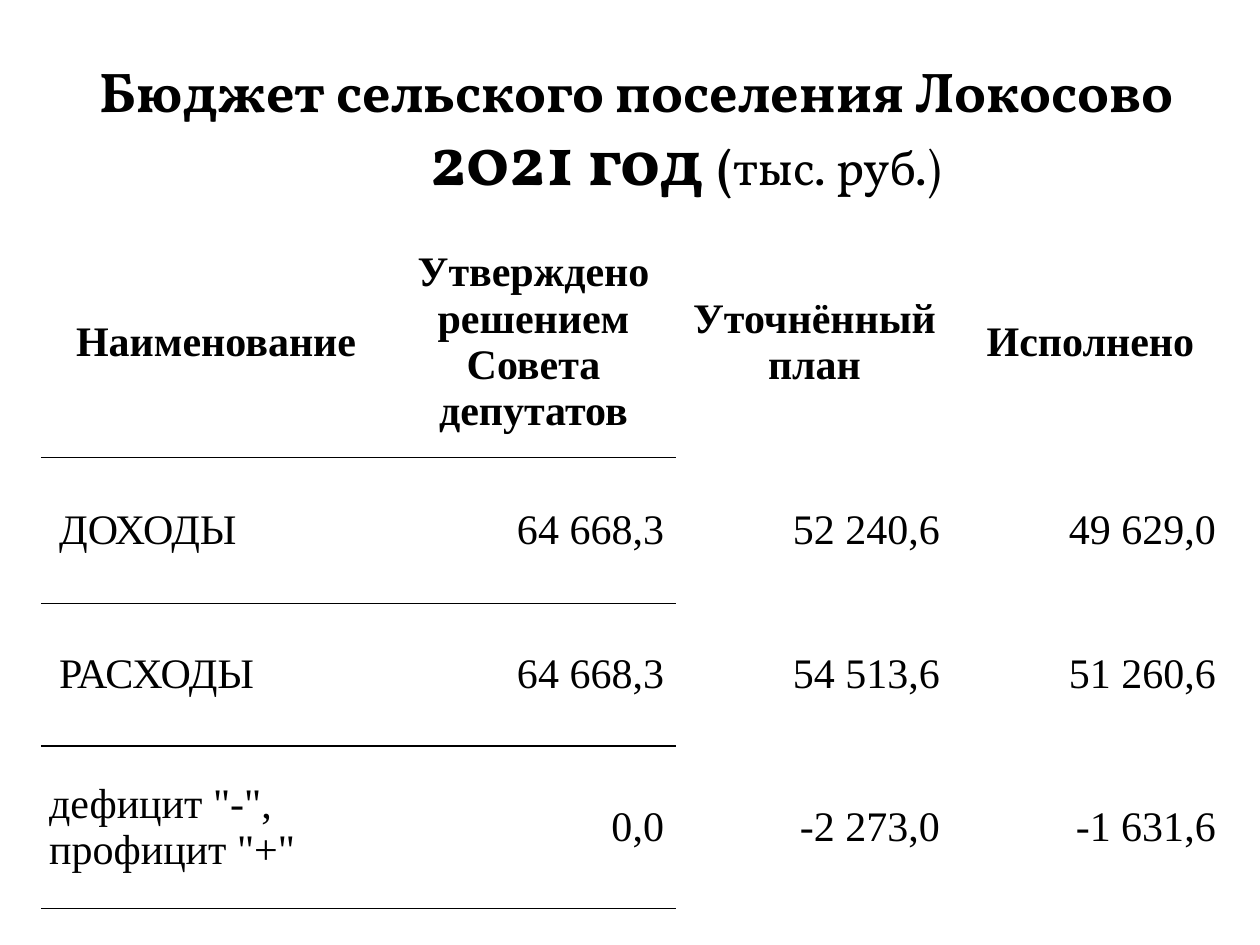
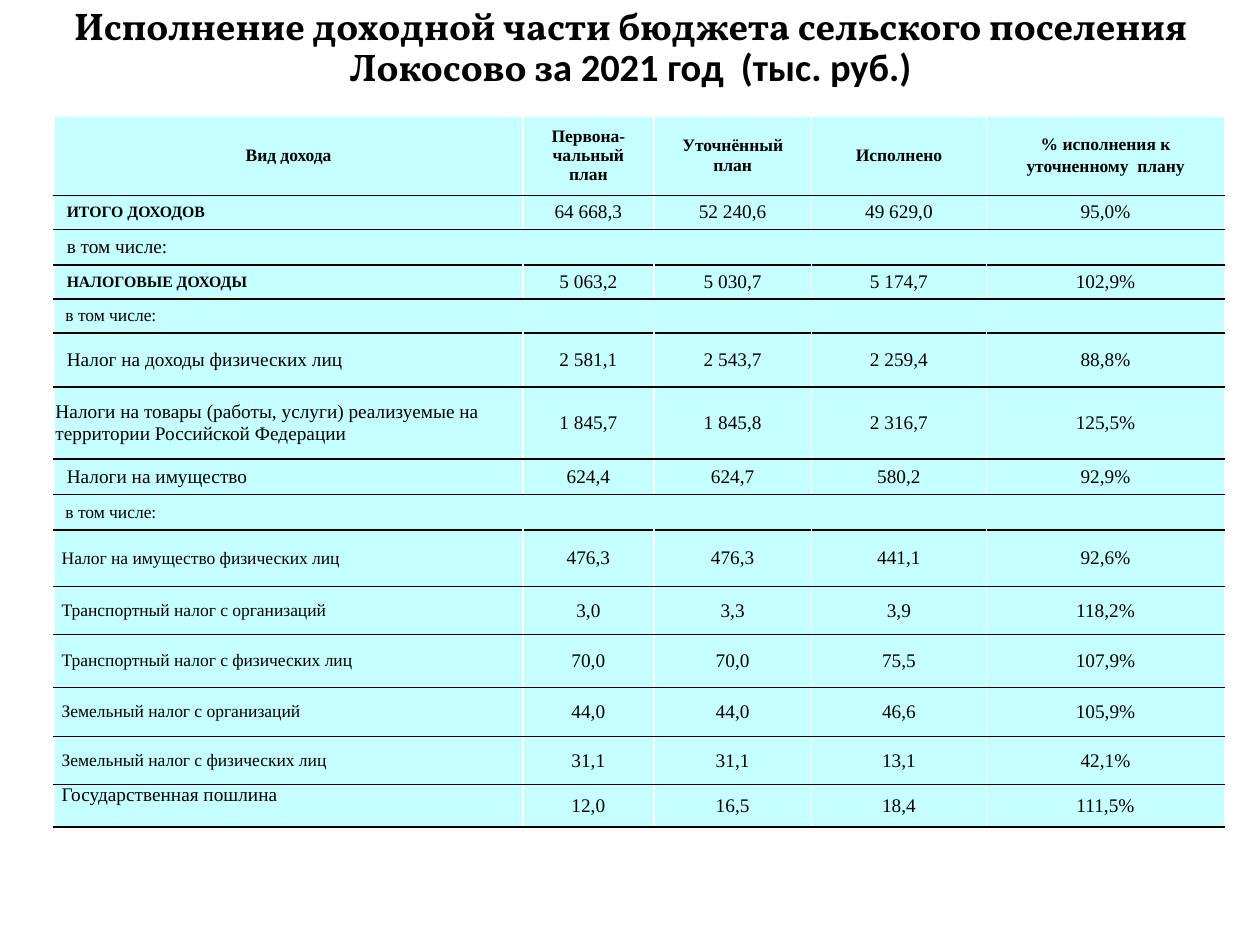
from dataclasses import dataclass
from typing import Optional

import lxml.etree
import pptx
import pptx.dml.color
import pptx.enum.text
import pptx.oxml.ns
import pptx.util

# Shared look; all lengths are columns and rows of a 1000 x 750 grid
SLIDE_W, SLIDE_H = pptx.util.Inches(10), pptx.util.Inches(7.5)
GRID_COLS, GRID_ROWS = 1000, 750
BLACK, WHITE, AQUA = "000000", "FFFFFF", "C5FFFF"
TITLE_FONT, TABLE_FONT = "Vollkorn", "Times New Roman"
ALIGN = pptx.enum.text.PP_ALIGN
ANCHOR = pptx.enum.text.MSO_ANCHOR


@dataclass(frozen=True)
class Box:
    left: float
    top: float
    width: float
    height: float


@dataclass(frozen=True)
class Inset:
    side: float
    edge: float


WIDE, NARROW, FLUSH = Inset(10, 5), Inset(6, 0), Inset(1, 0)
INDENTED, SUBHEAD = Inset(14, 0), Inset(9, 0)


@dataclass(frozen=True)
class TitleRun:
    text: str
    size: float
    bold: bool = True
    font: str = TITLE_FONT


@dataclass(frozen=True)
class TitleLine:
    runs: tuple[TitleRun, ...]
    indent: float = 0


@dataclass(frozen=True)
class CellStyle:
    size: float
    bold: bool = False
    align: ALIGN = ALIGN.CENTER
    inset: Inset = NARROW
    anchor: ANCHOR = ANCHOR.MIDDLE
    fill: str = WHITE
    top: str = BLACK
    bottom: str = BLACK


@dataclass(frozen=True)
class IncomeRow:
    height: float
    label: str
    values: Optional[tuple[str, ...]] = None
    size: float = 10
    bold: bool = False
    inset: Inset = NARROW
    anchor: ANCHOR = ANCHOR.MIDDLE


def gx(cols: float) -> int:
    return round(SLIDE_W * cols / GRID_COLS)


def gy(rows: float) -> int:
    return round(SLIDE_H * rows / GRID_ROWS)


def rgb(value: str) -> pptx.dml.color.RGBColor:
    return pptx.dml.color.RGBColor.from_string(value)


def set_font(font, name: str, size: float, bold: bool) -> None:
    font.name, font.size, font.bold = name, pptx.util.Pt(size), bold
    font.color.rgb = rgb(BLACK)


def add_title(slide, box: Box, lines: list[TitleLine]) -> None:
    sp = slide.shapes.add_textbox(gx(box.left), gy(box.top), gx(box.width), gy(box.height))
    tf = sp.text_frame
    tf.word_wrap = True
    tf.vertical_anchor = ANCHOR.MIDDLE
    tf.margin_top = tf.margin_bottom = 0
    for i, line in enumerate(lines):
        p = tf.add_paragraph() if i else tf.paragraphs[0]
        p.alignment, p.line_spacing = ALIGN.CENTER, 0.9
        first = line.runs[0]
        set_font(p.font, first.font, first.size, first.bold)
        if line.indent:
            p._p.get_or_add_pPr().set("marL", str(gx(line.indent)))
        for item in line.runs:
            r = p.add_run()
            r.text = item.text
            if item is not first:
                set_font(r.font, item.font, item.size, item.bold)


def set_borders(cell, top: str, bottom: str) -> None:
    tcPr = cell._tc.get_or_add_tcPr()
    sides = {"lnL": WHITE, "lnR": WHITE, "lnT": top, "lnB": bottom}
    for i, (tag, color) in enumerate(sides.items()):
        ln = lxml.etree.Element(pptx.oxml.ns.qn(f"a:{tag}"), w=str(pptx.util.Pt(1)))
        fill = lxml.etree.SubElement(ln, pptx.oxml.ns.qn("a:solidFill"))
        lxml.etree.SubElement(fill, pptx.oxml.ns.qn("a:srgbClr"), val=color)
        tcPr.insert(i, ln)


def fill_cell(cell, text: str, style: CellStyle) -> None:
    cell.text = text
    cell.vertical_anchor = style.anchor
    cell.margin_left = cell.margin_right = gx(style.inset.side)
    cell.margin_top = cell.margin_bottom = gy(style.inset.edge)
    cell.fill.solid()
    cell.fill.fore_color.rgb = rgb(style.fill)
    set_borders(cell, style.top, style.bottom)
    for i, p in enumerate(cell.text_frame.paragraphs):
        p.alignment = style.align
        set_font(p.font, TABLE_FONT, style.size, style.bold)
        if i:
            p.space_before = pptx.util.Pt(style.size * 0.2)


def add_table(slide, left: float, top: float, cols: list[float], rows: list[float]):
    frame = slide.shapes.add_table(len(rows), len(cols), gx(left), gy(top),
                                   gx(sum(cols)), gy(sum(rows)))
    table = frame.table
    table.first_row = table.horz_banding = False
    for column, width in zip(table.columns, cols):
        column.width = gx(width)
    for row, height in zip(table.rows, rows):
        row.height = gy(height)
    return table


# Slide 1: budget summary
BUDGET_TITLE = [
    TitleLine((TitleRun("Бюджет сельского поселения Локосово", 32),)),
    TitleLine((TitleRun("2021 год ", 40), TitleRun("(", 28),
               TitleRun("тыс. руб.)", 28, bold=False)), indent=78),
]
BUDGET_HEADERS = ("Наименование", "Утверждено решением Совета депутатов",
                  "Уточнённый план", "Исполнено")
BUDGET_ROWS = [
    ("ДОХОДЫ", "64 668,3", "52 240,6", "49 629,0"),
    ("РАСХОДЫ", "64 668,3", "54 513,6", "51 260,6"),
    ('дефицит "-", профицит "+"', "0,0", "-2 273,0", "-1 631,6"),
]
RULED_COLUMNS = 2


def build_budget(slide) -> None:
    add_title(slide, Box(42, 31, 927, 148), BUDGET_TITLE)
    table = add_table(slide, 33, 180, [277, 227, 219, 219], [183, 116, 113, 129])
    for c, header in enumerate(BUDGET_HEADERS):
        line = BLACK if c < RULED_COLUMNS else WHITE
        inset = WIDE if c < RULED_COLUMNS else NARROW
        fill_cell(table.cell(0, c), header,
                  CellStyle(24, bold=True, inset=inset, top=WHITE, bottom=line))
        for r, row in enumerate(BUDGET_ROWS, 1):
            if c:
                align, inset = ALIGN.RIGHT, WIDE
            else:
                align, inset = ALIGN.LEFT, NARROW if r == len(BUDGET_ROWS) else INDENTED
            fill_cell(table.cell(r, c), row[c],
                      CellStyle(24, align=align, inset=inset, top=line, bottom=line))


# Slide 2: income by source
INCOME_TITLE = [TitleLine((
    TitleRun("Исполнение доходной части бюджета сельского поселения Локосово з", 22),
    TitleRun("а 2021 год  (тыс. руб.)", 22, font="Calibri"),
))]
INCOME_HEADERS = ("Вид дохода", "Первона-чальный план", "Уточнённый план", "Исполнено",
                  "% исполнения к\nуточненному  плану")
HEADER_HEIGHT = 63
INCOME_ROWS = [
    IncomeRow(27, "ИТОГО ДОХОДОВ", ("64 668,3", "52 240,6", "49 629,0", "95,0%"),
              9, True, WIDE),
    IncomeRow(28, "в том числе:", size=11, inset=WIDE),
    IncomeRow(27, "НАЛОГОВЫЕ ДОХОДЫ", ("5 063,2", "5 030,7", "5 174,7", "102,9%"),
              9, True, WIDE),
    IncomeRow(27, "в том числе:", inset=SUBHEAD),
    IncomeRow(43, "Налог на доходы физических лиц",
              ("2 581,1", "2 543,7", "2 259,4", "88,8%"), 11, inset=WIDE),
    IncomeRow(57, "Налоги на товары (работы, услуги) реализуемые на территории "
              "Российской Федерации",
              ("1 845,7", "1 845,8", "2 316,7", "125,5%"), 11, inset=FLUSH),
    IncomeRow(27, "Налоги на имущество", ("624,4", "624,7", "580,2", "92,9%"),
              11, inset=WIDE),
    IncomeRow(28, "в том числе:", inset=SUBHEAD),
    IncomeRow(45, "Налог на имущество физических лиц",
              ("476,3", "476,3", "441,1", "92,6%")),
    IncomeRow(38, "Транспортный налог с организаций", ("3,0", "3,3", "3,9", "118,2%")),
    IncomeRow(42, "Транспортный налог с физических лиц",
              ("70,0", "70,0", "75,5", "107,9%")),
    IncomeRow(39, "Земельный налог с организаций", ("44,0", "44,0", "46,6", "105,9%")),
    IncomeRow(38, "Земельный налог с физических лиц", ("31,1", "31,1", "13,1", "42,1%")),
    IncomeRow(34, "Государственная пошлина", ("12,0", "16,5", "18,4", "111,5%"),
              11, anchor=ANCHOR.TOP),
]


def build_income(slide) -> None:
    add_title(slide, Box(16, 6, 969, 65), INCOME_TITLE)
    cols = [372, 104, 125, 139, 189]
    table = add_table(slide, 43, 92, cols,
                      [HEADER_HEIGHT] + [row.height for row in INCOME_ROWS])
    for c, header in enumerate(INCOME_HEADERS):
        fill_cell(table.cell(0, c), header,
                  CellStyle(10, bold=True, inset=WIDE, fill=AQUA, top=WHITE))
    value_style = CellStyle(11, fill=AQUA)
    for r, row in enumerate(INCOME_ROWS, 1):
        label_style = CellStyle(row.size, row.bold, ALIGN.LEFT, row.inset, row.anchor, AQUA)
        fill_cell(table.cell(r, 0), row.label, label_style)
        for c, value in enumerate(row.values or [""] * (len(cols) - 1), 1):
            fill_cell(table.cell(r, c), value, value_style)
        if row.values is None:
            table.cell(r, 0).merge(table.cell(r, len(cols) - 1))


def main() -> None:
    prs = pptx.Presentation()
    prs.slide_width, prs.slide_height = SLIDE_W, SLIDE_H
    for build in (build_budget, build_income):
        build(prs.slides.add_slide(prs.slide_layouts[6]))
    prs.save("out.pptx")


if __name__ == "__main__":
    main()
